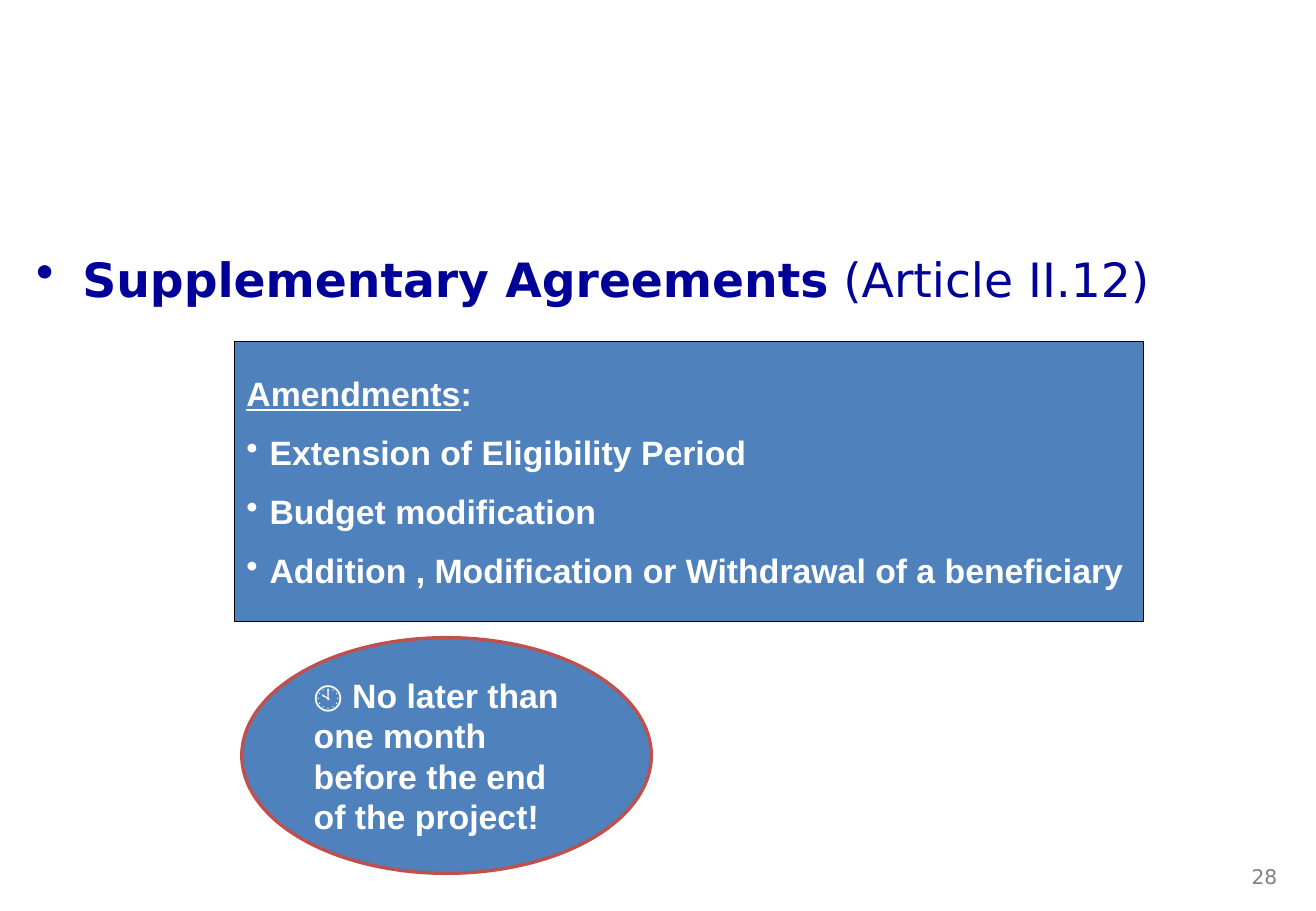
from lxml import etree
from pptx import Presentation
from pptx.dml.color import RGBColor
from pptx.enum.shapes import MSO_SHAPE
from pptx.enum.text import MSO_ANCHOR, PP_ALIGN
from pptx.oxml.ns import qn
from pptx.util import Pt

RECTANGLE, OVAL = MSO_SHAPE.RECTANGLE, MSO_SHAPE.OVAL
TOP, MIDDLE = MSO_ANCHOR.TOP, MSO_ANCHOR.MIDDLE
LEFT, RIGHT = PP_ALIGN.LEFT, PP_ALIGN.RIGHT
PX = 9144  # 100 px to the inch
NAVY, BLUE, RED = "000099", "4F81BD", "C0504D"
WHITE, BLACK, GREY = "FFFFFF", "000000", "808080"
SANS, ARIAL = "DejaVu Sans", "Arial"


def color(value):
    return RGBColor.from_string(value)


def scaled(box):
    return [length * PX for length in box]


def indent(para, hang, bullet=True, size=100):
    """Give a paragraph a hanging indent and, if wanted, a bullet."""
    props = para._p.get_or_add_pPr()
    props.set("marL", str(hang * PX))
    props.set("indent", str(-hang * PX))
    if bullet:
        etree.SubElement(props, qn("a:buSzPct"), val=str(size * 1000))
        etree.SubElement(props, qn("a:buChar"), char="•")


def add_para(frame, parts, font, size, fill, align=LEFT):
    """Fill the empty first paragraph or append one; parts are (text, bold, underline)."""
    para = frame.paragraphs[0] if not frame.text else frame.add_paragraph()
    para.alignment = align
    for text, bold, underline in parts:
        span = para.add_run()
        span.text = text
        span.font.name, span.font.size = font, Pt(size)
        span.font.bold, span.font.underline = bold, underline
        span.font.color.rgb = color(fill)
    return para


def add_text(page, box):
    frame = page.shapes.add_textbox(*scaled(box)).text_frame
    frame.word_wrap = True
    frame.vertical_anchor = TOP
    return frame


def add_panel(page, kind, box, line, width):
    panel = page.shapes.add_shape(kind, *scaled(box))
    panel.shadow.inherit = False
    panel.fill.solid()
    panel.fill.fore_color.rgb = color(BLUE)
    panel.line.color.rgb = color(line)
    panel.line.width = Pt(width)
    panel.text_frame.word_wrap = True
    panel.text_frame.vertical_anchor = MIDDLE
    return panel.text_frame


def heading(page, box):
    parts = [("Supplementary Agreements", True, False), (" (Article II.12)", False, False)]
    para = add_para(add_text(page, box), parts, SANS, 28, NAVY)
    indent(para, 38, size=109)


def amendments(page, box):
    frame = add_panel(page, RECTANGLE, box, BLACK, 0.75)
    title = add_para(frame, [("Amendments", True, True), (":", True, False)], ARIAL, 20, WHITE)
    indent(title, 19, bullet=False)
    for item in ("Extension of Eligibility Period", "Budget modification",
                 "Addition , Modification or Withdrawal of a beneficiary"):
        para = add_para(frame, [(item, True, False)], ARIAL, 20, WHITE)
        indent(para, 19)
        para.space_before = Pt(11)


def deadline(page, box):
    frame = add_panel(page, OVAL, box, RED, 2)
    text = "🕙 No later than one month before the end of the project!"
    add_para(frame, [(text, True, False)], ARIAL, 20, WHITE)


def page_number(page, box):
    add_para(add_text(page, box), [("28", False, False)], SANS, 12, GREY, RIGHT)


def main():
    deck = Presentation()
    deck.slide_width, deck.slide_height = scaled((1083, 750))
    page = deck.slides.add_slide(deck.slide_layouts[6])
    heading(page, (20, 201, 1033, 57))
    amendments(page, (193, 281, 748, 231))
    deadline(page, (199, 525, 337, 194))
    page_number(page, (808, 707, 253, 52))
    deck.save("out.pptx")


if __name__ == "__main__":
    main()
